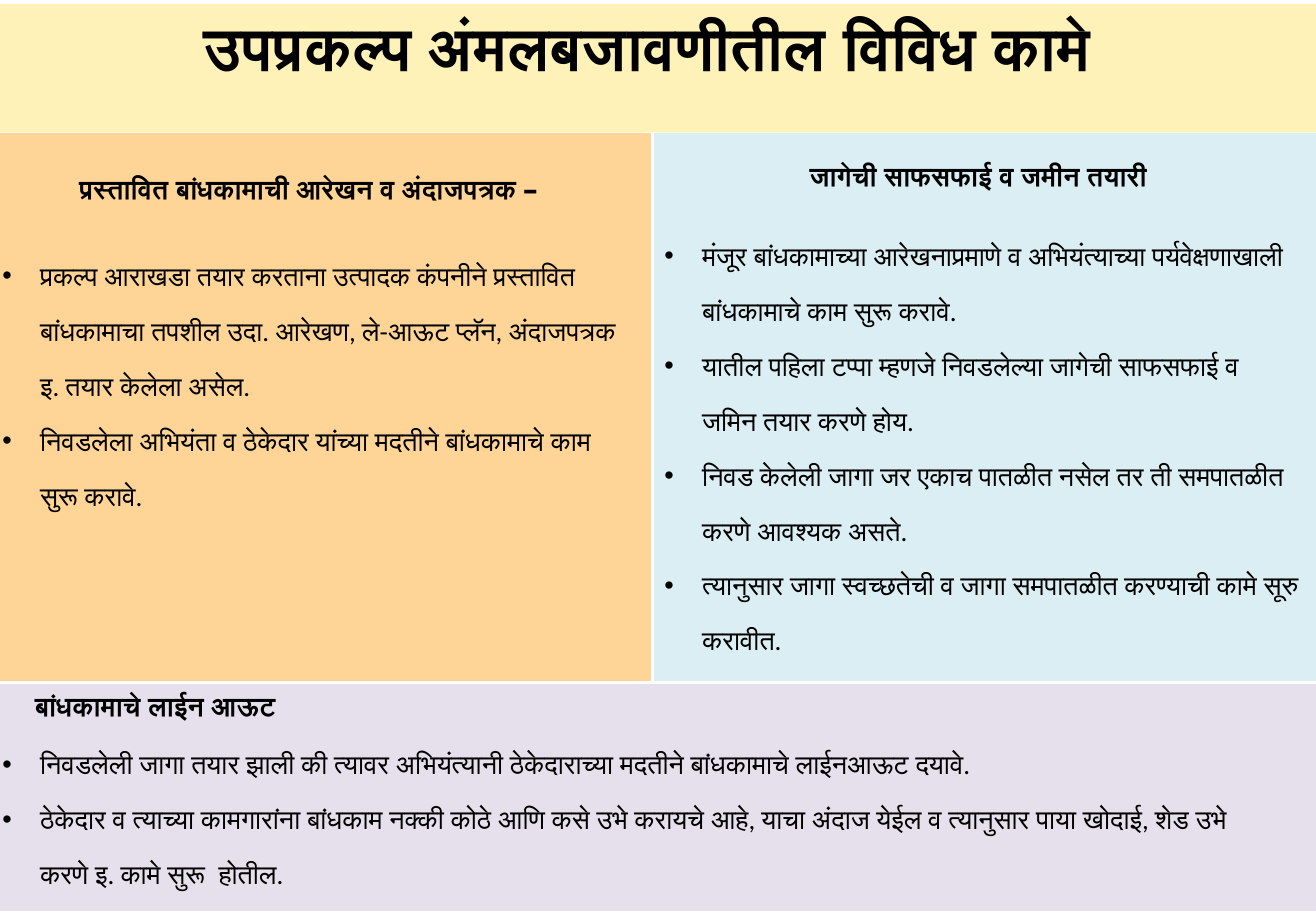
"""Build a slide on the works involved in carrying out a sub-project."""
import pptx
import pptx.dml.color
import pptx.enum.shapes
import pptx.enum.text
import pptx.util
from lxml import etree

Cm, Pt = pptx.util.Cm, pptx.util.Pt
ALIGN = pptx.enum.text.PP_ALIGN
FIT = pptx.enum.text.MSO_AUTO_SIZE

TITLE = "उपप्रकल्प अंमलबजावणीतील विविध कामे "
DRAWING = {
    "heading": "प्रस्तावित बांधकामाची आरेखन व अंदाजपत्रक – ",
    "bullets": [
        "प्रकल्प आराखडा तयार करताना उत्पादक कंपनीने प्रस्तावित बांधकामाचा तपशील उदा. आरेखण, ले-आऊट प्लॅन, अंदाजपत्रक इ. तयार केलेला असेल.",
        "निवडलेला अभियंता व ठेकेदार यांच्या मदतीने बांधकामाचे काम सुरू करावे.",
    ],
}
CLEARING = {
    "heading": "जागेची साफसफाई व जमीन तयारी ",
    "bullets": [
        "मंजूर बांधकामाच्या आरेखनाप्रमाणे व अभियंत्याच्या पर्यवेक्षणाखाली बांधकामाचे काम सुरू करावे.",
        "यातील पहिला टप्पा म्हणजे निवडलेल्या जागेची साफसफाई व जमिन तयार करणे होय.",
        "निवड केलेली जागा जर एकाच पातळीत नसेल तर ती समपातळीत करणे आवश्यक असते.",
        "त्यानुसार जागा स्वच्छतेची व जागा समपातळीत करण्याची कामे सूरु करावीत.",
    ],
}
LAYOUT_HEADING = "बांधकामाचे लाईन आऊट"
LAYOUT_BULLETS = [
    "निवडलेली जागा तयार झाली की त्यावर अभियंत्यानी ठेकेदाराच्या मदतीने बांधकामाचे लाईनआऊट दयावे.",
    "ठेकेदार व त्याच्या कामगारांना बांधकाम नक्की कोठे आणि कसे उभे करायचे आहे, याचा अंदाज येईल व त्यानुसार पाया खोदाई, शेड उभे करणे इ. कामे सुरू  होतील.",
]

LEFT, MIDDLE = -0.13, 13.64
TOP, PANEL_WIDTH, PANEL_HEIGHT = 2.74, 14.17, 11.53
BOTTOM = TOP + PANEL_HEIGHT
PANELS = [
    ("E6E0EC", (LEFT, BOTTOM, 27.94, 5.08)),
    ("FFD597", (LEFT, TOP, PANEL_WIDTH, PANEL_HEIGHT)),
    ("DBEEF4", (MIDDLE, TOP, PANEL_WIDTH, PANEL_HEIGHT)),
]
LINE_SPACING = 1.7
INDENT = 0.79


def colour(code):
    return pptx.dml.color.RGBColor.from_string(code)


def lengths(place):
    return [Cm(value) for value in place]


def format_text(para, size, bold):
    font = para.runs[0].font
    font.name, font.size, font.bold = "Calibri", Pt(size), bold
    font.color.rgb = colour("000000")


def add_panel(page, fill, place):
    panel = page.shapes.add_shape(
        pptx.enum.shapes.MSO_SHAPE.RECTANGLE, *lengths(place))
    panel.shadow.inherit = False
    panel.fill.solid()
    panel.fill.fore_color.rgb = colour(fill)
    panel.line.color.rgb = colour("FFFFFF")
    panel.line.width = Pt(2)


def add_bullet(para):
    properties = para._p.get_or_add_pPr()
    properties.set("marL", str(Cm(INDENT)))
    properties.set("indent", str(-Cm(INDENT)))
    namespace = pptx.oxml.ns.nsuri("a")
    etree.SubElement(properties, f"{{{namespace}}}buFont", typeface="Arial")
    etree.SubElement(properties, f"{{{namespace}}}buChar", char="•")


def add_box(page, place, heading="", bullets=(), gap=0):
    frame = page.shapes.add_textbox(*lengths(place)).text_frame
    frame.word_wrap = bool(bullets)
    frame.auto_size = FIT.SHAPE_TO_FIT_TEXT
    lines = ([heading] if heading else []) + list(bullets)
    frame.text = "\n".join(lines)
    for index, para in enumerate(frame.paragraphs):
        is_heading = bool(heading) and index == 0
        format_text(para, 16, is_heading)
        if bullets:
            para.line_spacing = LINE_SPACING
        if not is_heading:
            add_bullet(para)
        elif bullets:
            para.alignment = ALIGN.CENTER
            para.space_after = Pt(gap)


def add_title(page):
    title = page.shapes.title
    title.left, title.top, title.width, title.height = lengths(
        (-0.1, 0.08, 27.61, 2.69))
    title.fill.solid()
    title.fill.fore_color.rgb = colour("FFF2B9")
    frame = title.text_frame
    frame.text = TITLE
    frame.auto_size = FIT.NONE
    frame.vertical_anchor = pptx.enum.text.MSO_ANCHOR.TOP
    frame.paragraphs[0].alignment = ALIGN.CENTER
    format_text(frame.paragraphs[0], 36, True)
    page.shapes.element.append(title.element)


def main():
    deck = pptx.Presentation()
    deck.slide_width, deck.slide_height = Cm(27.51), Cm(19.05)
    page = deck.slides.add_slide(deck.slide_layouts[5])
    for fill, place in PANELS:
        add_panel(page, fill, place)
    add_box(page, (-0.2, 3.02, 13.44, 7.9), gap=18.5, **DRAWING)
    add_box(page, (MIDDLE, TOP, 13.77, PANEL_HEIGHT), gap=14.5, **CLEARING)
    add_title(page)
    add_box(page, (0.48, 14.3, 5.97, 0.94), heading=LAYOUT_HEADING)
    add_box(page, (-0.2, 15.04, 26.54, 3.73), bullets=LAYOUT_BULLETS)
    deck.save("out.pptx")


if __name__ == "__main__":
    main()
